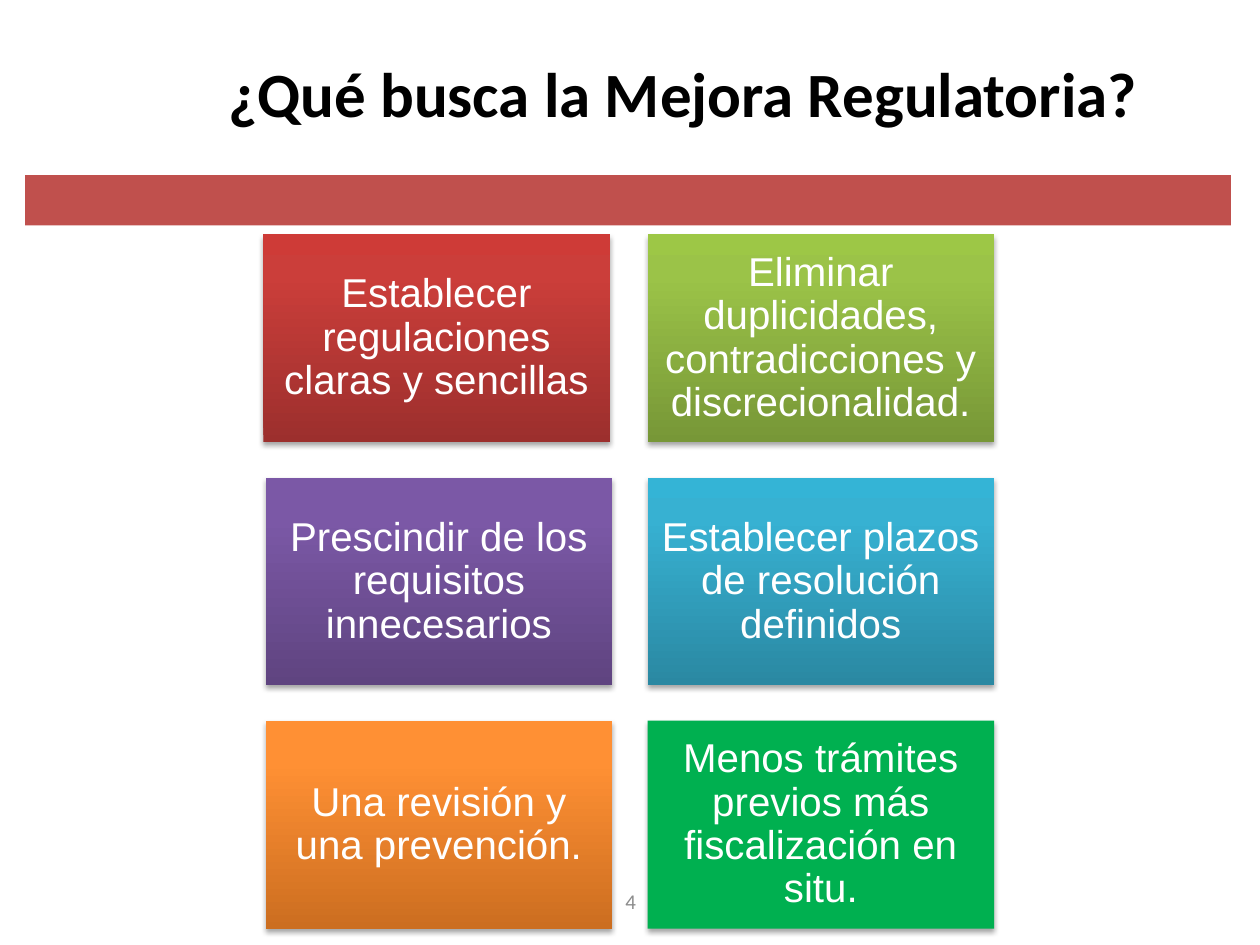
from lxml import etree
from pptx import Presentation
from pptx.dml.color import RGBColor
from pptx.enum import shapes, text
from pptx.oxml import ns
from pptx.util import Inches, Pt

COLORS = {
    "black": "000000", "white": "FFFFFF", "gray": "8C8C8C",
    "band": "C0504D", "green": "00B050",
}


def write_text(box, words, size, font="Calibri", color="black", bold=False,
               inset=0.1, line_spacing=1.0):
    frame = box.text_frame
    frame.word_wrap = True
    frame.vertical_anchor = text.MSO_ANCHOR.MIDDLE
    frame.margin_left = frame.margin_right = Inches(0.1)
    frame.margin_top = frame.margin_bottom = Inches(inset)
    para = frame.paragraphs[0]
    para.alignment = text.PP_ALIGN.CENTER
    para.line_spacing = line_spacing
    span = para.add_run()
    span.text = words
    span.font.name = font
    span.font.size = Pt(size)
    span.font.bold = bold
    span.font.color.rgb = RGBColor.from_string(COLORS[color])


def add_color(parent, color, alpha=100):
    node = etree.SubElement(parent, ns.qn("a:srgbClr"), val=color)
    if alpha < 100:
        etree.SubElement(node, ns.qn("a:alpha"), val=str(alpha * 1000))


deck = Presentation()
deck.slide_width, deck.slide_height = Inches(10), Inches(7.5)
page = deck.slides.add_slide(deck.slide_layouts[6])

# Page number and title
number = page.shapes.add_textbox(Inches(3.42), Inches(6.95), Inches(3.17), Inches(0.4))
write_text(number, "4", 12, color="gray", inset=0.05)
title = page.shapes.add_textbox(Inches(1.22), Inches(0.36), Inches(8.4), Inches(0.75))
write_text(title, "¿Qué busca la Mejora Regulatoria?", 36, bold=True, inset=0.05)

# Band under the title
band = page.shapes.add_shape(shapes.MSO_SHAPE.RECTANGLE,
                             Inches(0.2), Inches(1.39), Inches(9.57), Inches(0.4))
band.shadow.inherit = False
band.fill.solid()
band.fill.fore_color.rgb = RGBColor.from_string(COLORS["band"])
band.line.fill.background()

# Goals in a grid of two columns: wording and gradient from bottom to top
goals = [
    ("Establecer regulaciones claras y sencillas", ("9C2F2D", "CB3E3A", "CE3B37")),
    ("Eliminar duplicidades, contradicciones y discrecionalidad.",
     ("779737", "9BC348", "9DC746")),
    ("Prescindir de los requisitos innecesarios", ("5F4480", "7B58A6", "7C57A8")),
    ("Establecer plazos de resolución definidos", ("2A88A2", "37B1D2", "34B4D6")),
    ("Una revisión y una prevención.", ("CC6E20", "FF9034", "FF9136")),
    ("Menos trámites previos más fiscalización en situ.", None),
]
for index, (words, gradient) in enumerate(goals):
    row, column = divmod(index, 2)
    left = 5.14 if column else 2.11
    if index == 0:
        left = 2.09  # the first card sits slightly further left
    card = page.shapes.add_shape(shapes.MSO_SHAPE.RECTANGLE, Inches(left),
                                 Inches(1.86 + 1.93 * row), Inches(2.75), Inches(1.65))
    card.line.fill.background()
    if gradient:
        card.fill.gradient()
        card.fill.gradient_angle = 90
        stops = card.element.spPr.find(".//" + ns.qn("a:gsLst"))
        for stop in list(stops):
            stops.remove(stop)
        for position, color in zip((0, 80, 100), gradient):
            add_color(etree.SubElement(stops, ns.qn("a:gs"), pos=str(position * 1000)), color)
    else:
        card.fill.solid()
        card.fill.fore_color.rgb = RGBColor.from_string(COLORS["green"])

    # Soft shadow below the card
    card.shadow.inherit = False
    effects = card.element.spPr.find(ns.qn("a:effectLst"))
    shadow = etree.SubElement(effects, ns.qn("a:outerShdw"), blurRad=str(Pt(3.1)),
                              dist=str(Pt(1.8)), dir=str(90 * 60000), rotWithShape="0")
    add_color(shadow, COLORS["black"], alpha=35)
    write_text(card, words, 23, font="Arial", color="white", line_spacing=0.9)

deck.save("out.pptx")
